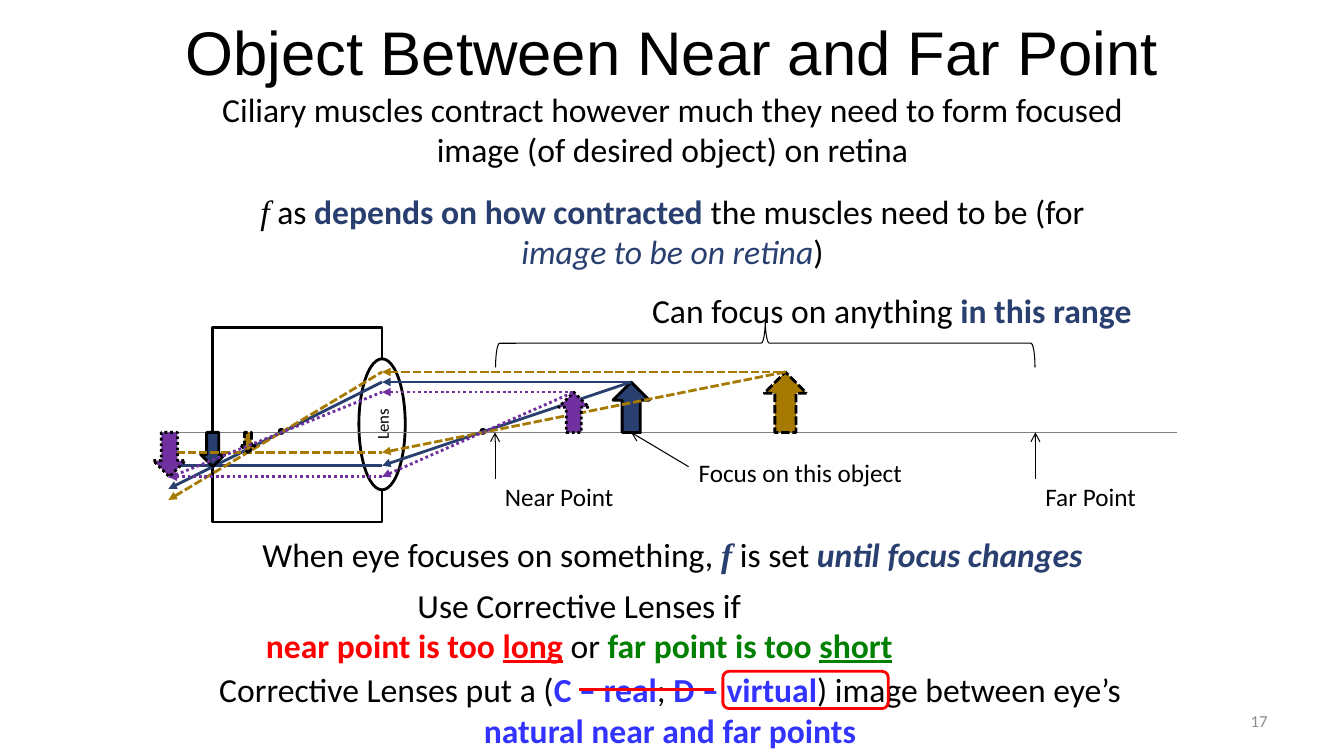
from lxml import etree
from pptx import Presentation
from pptx.dml.color import RGBColor
from pptx.enum import dml, shapes, text
from pptx.oxml import ns
from pptx.util import Inches, Pt

BLACK, WHITE, GREY, PALE = "000000", "FFFFFF", "808080", "8C8C8C"
NAVY, GOLD, PURPLE = "293F6F", "A67A00", "7030A0"
RED, GREEN, BLUE = "FF0000", "008000", "3333FF"
AXIS, LENS, SCREEN = 4.29, 3.79, 1.67
DASH, DOT = dml.MSO_LINE.SQUARE_DOT, dml.MSO_LINE.ROUND_DOT
LEFT, CENTER, RIGHT = text.PP_ALIGN.LEFT, text.PP_ALIGN.CENTER, text.PP_ALIGN.RIGHT
TOP, MIDDLE = text.MSO_ANCHOR.TOP, text.MSO_ANCHOR.MIDDLE
SHAPE = shapes.MSO_SHAPE

SERIF = {"name": "Times New Roman", "italic": True}
STRONG = {"bold": True, "color": NAVY}
WARN = {"bold": True, "color": RED}
SHORT = {"bold": True, "color": GREEN}
VIVID = {"bold": True, "color": BLUE}

OBJECTS = [
    {"color": NAVY, "dash": None, "x": 6.26, "size": (0.36, 0.5),
     "image_x": 2.11, "image_size": (0.24, 0.34), "low": 4.62, "end": 4.85},
    {"color": GOLD, "dash": DASH, "x": 7.79, "size": (0.42, 0.6),
     "image_x": 2.46, "image_size": (0.14, 0.2), "low": 4.49, "end": 4.96},
    {"color": PURPLE, "dash": DOT, "x": 5.69, "size": (0.3, 0.4),
     "image_x": 1.68, "image_size": (0.32, 0.44), "low": 4.73, "end": 4.74},
]


def rgb(value):
    return RGBColor.from_string(value)


def style_line(line, color, width, dash=None):
    line.color.rgb = rgb(color)
    line.width = Pt(width)
    if dash:
        line.dash_style = dash


def add_line(slide, start, end, color, width, dash=None, head=None):
    points = [Inches(v) for v in (*start, *end)]
    line = slide.shapes.add_connector(shapes.MSO_CONNECTOR.STRAIGHT, *points)
    style_line(line.line, color, width, dash)
    properties = line._element.spPr
    if head:
        stroke = properties.find(ns.qn("a:ln"))
        etree.SubElement(stroke, ns.qn("a:headEnd")).set("type", head)
    etree.SubElement(properties, ns.qn("a:effectLst"))


def add_outline(slide, kind, box, fill=None, color=BLACK, width=2, dash=None, rotation=0):
    outline = slide.shapes.add_shape(kind, *[Inches(v) for v in box])
    outline.shadow.inherit = False
    outline.rotation = rotation
    if fill:
        outline.fill.solid()
        outline.fill.fore_color.rgb = rgb(fill)
    else:
        outline.fill.background()
    style_line(outline.line, color, width, dash)
    return outline


def write(frame, runs, size, align, anchor, font="Calibri"):
    frame.word_wrap = True
    frame.vertical_anchor = anchor
    paragraph = frame.paragraphs[0]
    paragraph.alignment = align
    for words, changes in runs:
        if words == "\n":
            paragraph.add_line_break()
            continue
        run = paragraph.add_run()
        run.text = words
        values = {"name": font, "size": Pt(size), "color": BLACK, **changes}
        run.font.color.rgb = rgb(values.pop("color"))
        for key, value in values.items():
            setattr(run.font, key, value)


def add_words(slide, box, runs, size=24, align=CENTER, anchor=TOP, font="Calibri", fill=None):
    words = slide.shapes.add_textbox(*[Inches(v) for v in box])
    if fill:
        words.fill.solid()
        words.fill.fore_color.rgb = rgb(fill)
    write(words.text_frame, runs, size, align, anchor, font)


def add_block_arrow(slide, x, top, size, color, dash, rotation=0):
    width, height = size
    add_outline(slide, SHAPE.DOWN_ARROW, (x - width / 2, top, width, height),
                fill=color, dash=dash, rotation=rotation)


def add_object(slide, item):
    color, dash, x = item["color"], item["dash"], item["x"]
    tip = AXIS - item["size"][1]
    add_block_arrow(slide, x, tip, item["size"], color, dash, 180)
    rays = [
        ((LENS, tip), (x, tip)),
        ((SCREEN, item["end"]), (LENS, tip)),
        ((LENS, item["low"]), (x, tip)),
        ((SCREEN, item["low"]), (LENS, item["low"])),
    ]
    for start, end in rays:
        add_line(slide, start, end, color, 2, dash, "triangle")
    add_block_arrow(slide, item["image_x"], AXIS, item["image_size"], color, dash)


def add_eye(slide):
    add_outline(slide, SHAPE.RECTANGLE, (2.11, 3.25, 1.68, 1.93))
    lens = add_outline(slide, SHAPE.OVAL, (3.56, 3.56, 0.46, 1.3), fill=WHITE)
    write(lens.text_frame, [("Lens", {})], 12, CENTER, MIDDLE)
    lens.text_frame._txBody.bodyPr.set("vert", "vert270")
    for x in (2.77, 4.77):
        add_outline(slide, SHAPE.OVAL, (x, AXIS - 0.03, 0.04, 0.04), fill=BLACK)
    add_line(slide, (SCREEN, AXIS), (11.67, AXIS), GREY, 0.75)


def add_range(slide):
    for x, label, width in ((4.91, "Near Point", 1.44), (10.27, "Far Point", 1.27)):
        add_line(slide, (x, AXIS), (x, 4.75), BLACK, 0.75, head="arrow")
        add_words(slide, (x, 4.73, width, 0.4), [(label, {})], 18, LEFT)
    add_outline(slide, SHAPE.LEFT_BRACE, (7.35, 0.73, 0.48, 5.35), width=0.75, rotation=90)
    add_words(slide, (6.02, 2.83, 5.65, 0.5),
              [("Can focus on anything ", {}), ("in this range", STRONG)])
    add_line(slide, (6.26, AXIS), (6.83, 4.63), BLACK, 0.75, head="arrow")
    add_words(slide, (6.83, 4.49, 2.58, 0.4), [("Focus on this object", {})], 18, LEFT)


def add_statements(slide):
    add_words(slide, (2.07, 5.75, 7.35, 0.91), [
        ("Use Corrective Lenses if", {}), ("\n", {}),
        ("near point is too ", WARN), ("long", {**WARN, "underline": True}),
        (" or ", {}),
        ("far point is too ", SHORT), ("short", {**SHORT, "underline": True}),
    ], fill=WHITE)
    add_words(slide, (1.67, 0, 10, 1), [("Object Between Near and Far Point", {})],
              44, anchor=MIDDLE, font="Arial")
    add_words(slide, (1.84, 0.83, 9.66, 0.91), [
        ("Ciliary muscles contract however much they need to form focused "
         "image (of desired object) on retina", {}),
    ])
    add_words(slide, (2.1, 1.84, 9.14, 0.91), [
        ("f", SERIF), (" as ", {}), ("depends on how contracted ", STRONG),
        ("the muscles need to be (for ", {}),
        ("image to be on retina", {"italic": True, "color": NAVY}), (")", {}),
    ])
    add_words(slide, (1.68, 5.25, 9.98, 0.5), [
        ("When eye focuses on something, ", {}), ("f", {**STRONG, **SERIF}),
        (" is set ", {}), ("until focus changes", {**STRONG, "italic": True}),
    ])


def add_conclusion(slide):
    add_words(slide, (1.62, 6.59, 10.05, 0.91), [
        ("Corrective Lenses put a (", {}), ("C – real", VIVID), ("; ", {}),
        ("D – virtual", VIVID), (") image between eye’s ", {}),
        ("natural near and far points", VIVID),
    ])
    add_outline(slide, SHAPE.ROUNDED_RECTANGLE, (7.17, 6.66, 1.64, 0.37), color=RED)
    add_line(slide, (5.74, 6.84), (7.08, 6.84), RED, 2)
    add_words(slide, (9.56, 6.95, 3.11, 0.4), [("17", {"color": PALE})], 12, RIGHT, MIDDLE)


def main():
    deck = Presentation()
    deck.slide_width, deck.slide_height = Inches(13.33), Inches(7.5)
    slide = deck.slides.add_slide(deck.slide_layouts[6])
    add_statements(slide)
    add_eye(slide)
    for item in OBJECTS:
        add_object(slide, item)
    add_range(slide)
    add_conclusion(slide)
    deck.save("out.pptx")


if __name__ == "__main__":
    main()
